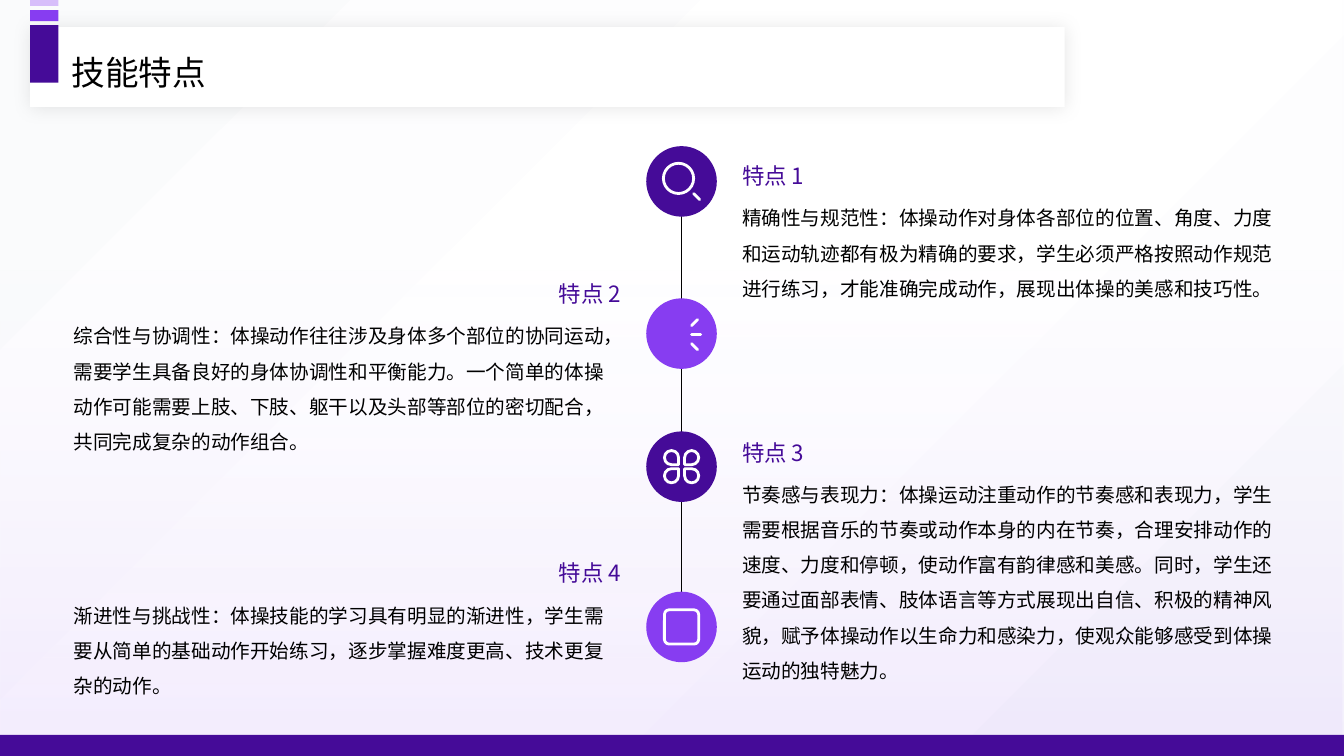
from lxml import etree
from pptx import Presentation
from pptx.dml.color import RGBColor
from pptx.enum.shapes import MSO_CONNECTOR as Link, MSO_SHAPE as Kind
from pptx.enum.text import MSO_ANCHOR as Anchor, MSO_AUTO_SIZE as Auto, PP_ALIGN as Align
from pptx.oxml.ns import qn
from pptx.util import Inches, Pt

# Content
TITLE = "技能特点"
FONT = "Noto Sans CJK SC"
DARK, MID, PALE = "450B98", "873DF1", "D7BEFA"
WHITE, BLACK = "FFFFFF", "000000"
LEFT, RIGHT = 0.73, 7.36
# heading, text, column, heading top, circle top, circle colour
POINTS = [
    ("特点 1", "精确性与规范性：体操动作对身体各部位的位置、角度、力度和运动轨迹都有极为精确的要求，学生必须严格按照动作规范进行练习，才能准确完成动作，展现出体操的美感和技巧性。",
     RIGHT, 1.56, 1.45, DARK),
    ("特点 2", "综合性与协调性：体操动作往往涉及身体多个部位的协同运动，需要学生具备良好的身体协调性和平衡能力。一个简单的体操动作可能需要上肢、下肢、躯干以及头部等部位的密切配合，共同完成复杂的动作组合。",
     LEFT, 2.73, 2.96, MID),
    ("特点 3", "节奏感与表现力：体操运动注重动作的节奏感和表现力，学生需要根据音乐的节奏或动作本身的内在节奏，合理安排动作的速度、力度和停顿，使动作富有韵律感和美感。同时，学生还要通过面部表情、肢体语言等方式展现出自信、积极的精神风貌，赋予体操动作以生命力和感染力，使观众能够感受到体操运动的独特魅力。",
     RIGHT, 4.3, 4.28, DARK),
    ("特点 4", "渐进性与挑战性：体操技能的学习具有明显的渐进性，学生需要从简单的基础动作开始练习，逐步掌握难度更高、技术更复杂的动作。",
     LEFT, 5.5, 5.87, MID),
]
TABS = [(0.25, 0.57, DARK), (0.1, 0.11, MID), (0, 0.06, PALE)]
HORN = [(6.61, 3.21), (6.73, 3.14), (6.77, 3.14), (6.8, 3.18), (6.8, 3.44),
        (6.77, 3.48), (6.73, 3.48), (6.61, 3.41), (6.58, 3.37), (6.58, 3.25)]
PEN = [(6.67, 6.32), (6.67, 6.26), (6.69, 6.21), (6.76, 6.14), (6.8, 6.12), (6.83, 6.13),
       (6.85, 6.15), (6.86, 6.18), (6.84, 6.22), (6.77, 6.29), (6.72, 6.31)]
STROKES = [(6.88, 1.92, 6.94, 1.98), (6.86, 3.23, 6.92, 3.17),
           (6.86, 3.32, 6.95, 3.32), (6.86, 3.41, 6.92, 3.47)]
PETALS = [(6.59, 4.47, 90), (6.79, 4.47, 180), (6.59, 4.65, 0), (6.79, 4.65, 270)]
WIDE, HIGH, DISC = 13.33, 7.5, 0.7

deck = Presentation()
deck.slide_width, deck.slide_height = Inches(WIDE), Inches(HIGH)
slide = deck.slides.add_slide(deck.slide_layouts[5])
shapes = slide.shapes


def color(code):
    return RGBColor.from_string(code)


def sub(node, tag, **attrs):
    return etree.SubElement(node, qn(tag), attrs)


def fade(fill, root, stops, angle):
    fill.gradient()
    fill.gradient_angle = angle
    rows = root.find(".//" + qn("a:gsLst"))
    for old in list(rows):
        rows.remove(old)
    for pos, code, alpha in stops:
        tint = sub(sub(rows, "a:gs", pos=str(pos * 1000)), "a:srgbClr", val=code)
        sub(tint, "a:alpha", val=str(alpha * 1000))


def paint(shape, fill=None, line=None, width=2):
    shape.shadow.inherit = False
    if fill:
        shape.fill.solid()
        shape.fill.fore_color.rgb = color(fill)
    else:
        shape.fill.background()
    if line:
        shape.line.color.rgb = color(line)
        shape.line.width = Pt(width)
    else:
        shape.line.fill.background()
    return shape


def block(kind, x, y, w, h, fill=None, line=None):
    return paint(shapes.add_shape(kind, *map(Inches, (x, y, w, h))), fill, line)


def stroke(x1, y1, x2, y2, code, width):
    link = shapes.add_connector(Link.STRAIGHT, *map(Inches, (x1, y1, x2, y2)))
    link.line.color.rgb = color(code)
    link.line.width = Pt(width)
    link.line._get_or_add_ln().set("cap", "rnd")
    sub(link._element.spPr, "a:effectLst")


def outline(dots):
    pen = shapes.build_freeform(*dots[0], scale=Inches(1))
    pen.add_line_segments(dots[1:], close=True)
    paint(pen.convert_to_shape(), line=WHITE)


def write(box, text, size, code, space=1.0, align=Align.LEFT, anchor=Anchor.TOP):
    frame = box.text_frame
    frame.word_wrap, frame.auto_size = True, Auto.NONE
    frame.vertical_anchor = anchor
    frame.text = text
    para = frame.paragraphs[0]
    para.alignment, para.line_spacing = align, space
    font = para.font
    font.name, font.size, font.color.rgb = FONT, Pt(size), color(code)
    sub(font._element, "a:ea", typeface=FONT)
    return frame


def label(x, y, h, *args):
    box = shapes.add_textbox(*map(Inches, (x, y, 5.43, h)))
    frame = write(box, *args)
    frame.margin_left = frame.margin_right = frame.margin_top = frame.margin_bottom = 0


# Background and tint
fade(slide.background.fill, slide._element,
     [(0, "FAFBFC", 100), (50, WHITE, 100), (97, "FAFBFC", 100)], 315)
tint = block(Kind.RECTANGLE, 0, 0, WIDE, HIGH)
fade(tint.fill, tint._element, [(35, PALE, 0), (100, "AF7EF6", 15)], 270)

# Timeline, circles and texts
stroke(6.76, 2.15, 6.76, 6.01, BLACK, 0.75)
for head, text, x, y, top, code in POINTS:
    block(Kind.OVAL, 6.41, top, DISC, DISC, code)
    side = Align.RIGHT if x == LEFT else Align.LEFT
    label(x, y, 0.37, head, 16, DARK, 1.0, side, Anchor.MIDDLE)
    label(x, y + 0.37, 1, text, 14, BLACK, 1.5)

# Icons: magnifier, horn, clover, pen in a frame
block(Kind.OVAL, 6.58, 1.62, 0.3, 0.3, line=WHITE)
for ends in STROKES:
    stroke(*ends, WHITE, 2)
outline(HORN)
for x, y, turn in PETALS:
    block(Kind.TEAR, x, y, 0.14, 0.14, line=WHITE).rotation = turn
block(Kind.ROUNDED_RECTANGLE, 6.59, 6.05, 0.34, 0.34, line=WHITE).adjustments[0] = 0.14
outline(PEN)

# Footer bar
block(Kind.RECTANGLE, 0, 7.29, WIDE, 0.21, DARK)

# Title banner with a soft shadow
banner = block(Kind.RECTANGLE, 0.3, 0.27, 10.26, 0.79, WHITE)
glow = sub(banner._element.spPr.find(qn("a:effectLst")), "a:outerShdw",
           blurRad=str(Pt(13)), dist="0", dir="0", algn="ctr", rotWithShape="0")
sub(sub(glow, "a:srgbClr", val=BLACK), "a:alpha", val="10000")
title = shapes.title
title.left, title.top, title.width, title.height = map(Inches, (0.61, 0.42, 8.82, 0.5))
write(title, TITLE, 24, BLACK, 1.1)
shapes._spTree.append(title._element)
for y, h, code in TABS:
    block(Kind.RECTANGLE, 0.3, y, 0.28, h, code)

deck.save("out.pptx")
